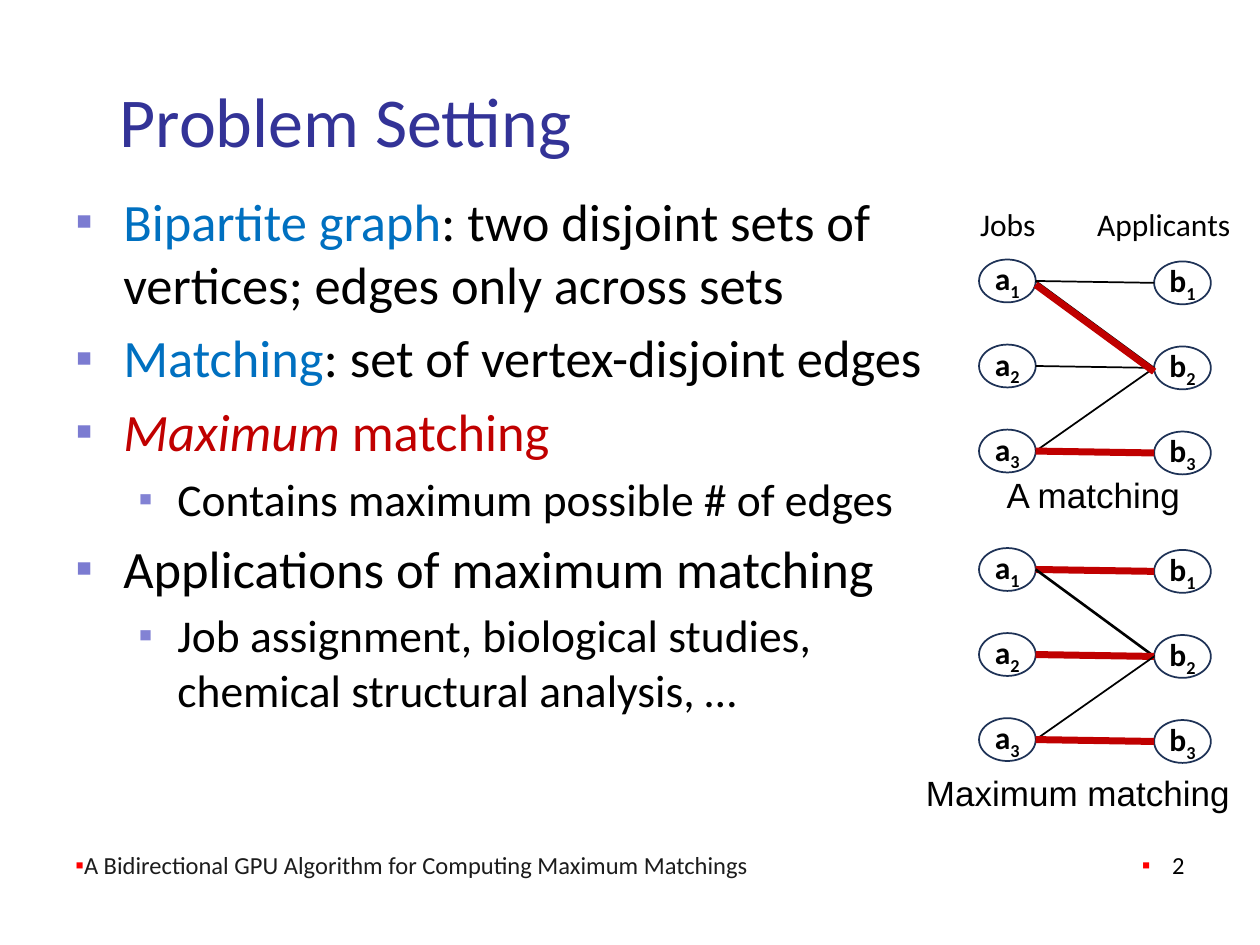
from lxml import etree
from pptx import Presentation
from pptx import util as u
from pptx.dml.color import RGBColor
from pptx.enum import shapes, text
from pptx.oxml import ns

BLACK = RGBColor(0x00, 0x00, 0x00)
INK = RGBColor(0x1C, 0x1C, 0x1C)
NAVY = RGBColor(0x33, 0x33, 0x97)
BLUE = RGBColor(0x00, 0x70, 0xC0)
RED = RGBColor(0xC0, 0x00, 0x00)
BRIGHT_RED = RGBColor(0xFF, 0x00, 0x00)
OUTLINE = RGBColor(0x1E, 0x32, 0x56)
BULLET = RGBColor(0x7B, 0x7B, 0xD1)
SUB_BULLET = RGBColor(0x82, 0x82, 0xD4)

W, H = 10, 7.5
MARGIN = 0.05 * W
NODE_W, NODE_H = 0.45, 0.34
COL_A, COL_B = 7.77, 9.16
ROW_STEP = 0.675
B_DROP = 0.015


def add_run(p, words, size=18, color=BLACK, font="Calibri", bold=False,
            italic=False, baseline=None):
    r = p.add_run()
    r.text = words
    r.font.size = u.Pt(size)
    r.font.name = font
    r.font.bold = bold
    r.font.italic = italic
    r.font.color.rgb = color
    if baseline:
        r.font._element.set("baseline", str(baseline * 1000))


def add_bullet(p, color, size, left=0, hang=0):
    pPr = p._p.get_or_add_pPr()
    pPr.set("marL", str(u.Inches(left)))
    pPr.set("indent", str(-u.Inches(hang)))
    clr = etree.SubElement(pPr, ns.qn("a:buClr"))
    etree.SubElement(clr, ns.qn("a:srgbClr"), val=str(color))
    etree.SubElement(pPr, ns.qn("a:buSzPct"), val=str(size * 1000))
    etree.SubElement(pPr, ns.qn("a:buFont"), typeface="Arial")
    etree.SubElement(pPr, ns.qn("a:buChar"), char="▪")


def add_frame(s, x, y, w, h, anchor=text.MSO_ANCHOR.TOP, wrap=True):
    sp = s.shapes.add_textbox(*map(u.Inches, (x, y, w, h)))
    tf = sp.text_frame
    tf.word_wrap = wrap
    tf.vertical_anchor = anchor
    return tf


def add_label(s, words, x, y, w, h, **fmt):
    add_run(add_frame(s, x, y, w, h, wrap=False).paragraphs[0], words, **fmt)


def add_title(s):
    tf = add_frame(s, MARGIN, 0.08 * H, 0.9 * W, 0.7, text.MSO_ANCHOR.MIDDLE)
    tf.margin_left = u.Inches(0.45)
    add_run(tf.paragraphs[0], "Problem Setting", size=40, color=NAVY)


def add_body(s):
    items = [
        (0, [("Bipartite graph", {"color": BLUE}),
             (": two disjoint sets of vertices; edges only across sets", {})]),
        (0, [("Matching", {"color": BLUE}),
             (": set of vertex-disjoint edges", {})]),
        (0, [("Maximum", {"color": RED, "italic": True}),
             (" matching", {"color": RED})]),
        (1, [("Contains maximum possible # of edges", {})]),
        (0, [("Applications of maximum matching", {})]),
        (1, [("Job assignment, biological studies, "
              "chemical structural analysis, …", {})]),
    ]
    levels = [(30, 6, (BULLET, 95, 0.38, 0.38)),
              (26, 5, (SUB_BULLET, 90, 0.81, 0.31))]
    tf = add_frame(s, MARGIN, 1.45, 7.09, 4.9)
    for i, (level, runs) in enumerate(items):
        size, gap, bullet = levels[level]
        p = tf.add_paragraph() if i else tf.paragraphs[0]
        p.level = level
        if i:
            p.space_before = u.Pt(gap)
        add_bullet(p, *bullet)
        for words, fmt in runs:
            add_run(p, words, size=size, **fmt)


def add_footer(s, words, x, w, color, align, indent=0):
    tf = add_frame(s, x, 6.53, w, 0.5, text.MSO_ANCHOR.BOTTOM)
    p = tf.paragraphs[0]
    p.alignment = align
    add_bullet(p, BRIGHT_RED, 100, indent, indent)
    add_run(p, words, size=14, color=color)


def add_node(s, letter, number, x, y):
    sp = s.shapes.add_shape(shapes.MSO_SHAPE.OVAL,
                            *map(u.Inches, (x, y, NODE_W, NODE_H)))
    sp.shadow.inherit = False
    sp.fill.background()
    sp.line.color.rgb = OUTLINE
    sp.line.width = u.Pt(1)
    tf = sp.text_frame
    tf.margin_left = tf.margin_right = 0
    tf.vertical_anchor = text.MSO_ANCHOR.MIDDLE
    p = tf.paragraphs[0]
    p.alignment = text.PP_ALIGN.CENTER
    add_run(p, letter, bold=True)
    add_run(p, str(number), bold=True, baseline=-25)


def add_edge(s, top, a, b, color=BLACK, width=1, shift=0):
    mid = top + NODE_H / 2 + shift
    ends = (COL_A + NODE_W, mid + (a - 1) * ROW_STEP,
            COL_B, mid + (b - 1) * ROW_STEP + B_DROP)
    c = s.shapes.add_connector(shapes.MSO_CONNECTOR.STRAIGHT,
                               *map(u.Inches, ends))
    c.line.color.rgb = color
    c.line.width = u.Pt(width)
    etree.SubElement(c._element.spPr, ns.qn("a:effectLst"))


def add_graph(s, top, edges):
    for letter, x, drop in (("a", COL_A, 0), ("b", COL_B, B_DROP)):
        for row in range(3):
            add_node(s, letter, row + 1, x, top + drop + row * ROW_STEP)
    for a, b, *style in edges:
        add_edge(s, top, a, b, *style)


def main():
    prs = Presentation()
    prs.slide_width, prs.slide_height = u.Inches(W), u.Inches(H)
    s = prs.slides.add_slide(prs.slide_layouts[6])

    add_title(s)
    add_body(s)
    add_label(s, "Jobs", 7.68, 1.58, 0.65, 0.4)
    add_label(s, "Applicants", 8.61, 1.58, 1.27, 0.4)
    add_graph(s, 2.06, [(1, 1), (1, 2), (2, 2), (3, 2), (3, 3),
                        (1, 2, RED, 4, 0.03), (3, 3, RED, 4)])
    add_label(s, "A matching", 7.89, 3.71, 1.59, 0.44, size=20, font="Arial")
    add_graph(s, 4.35, [(1, 1, RED, 4), (1, 2, BLACK, 1.5), (2, 2, RED, 4),
                        (3, 2), (3, 3, RED, 4)])
    add_label(s, "Maximum matching", 7.25, 6.07, 2.63, 0.44, size=20,
              font="Arial")
    add_footer(s, "A Bidirectional GPU Algorithm for Computing Maximum Matchings",
               MARGIN, 7.57, INK, text.PP_ALIGN.LEFT)
    add_footer(s, "2", 7.42, 2.08, BLACK, text.PP_ALIGN.RIGHT, 0.24)
    prs.save("out.pptx")


if __name__ == "__main__":
    main()
